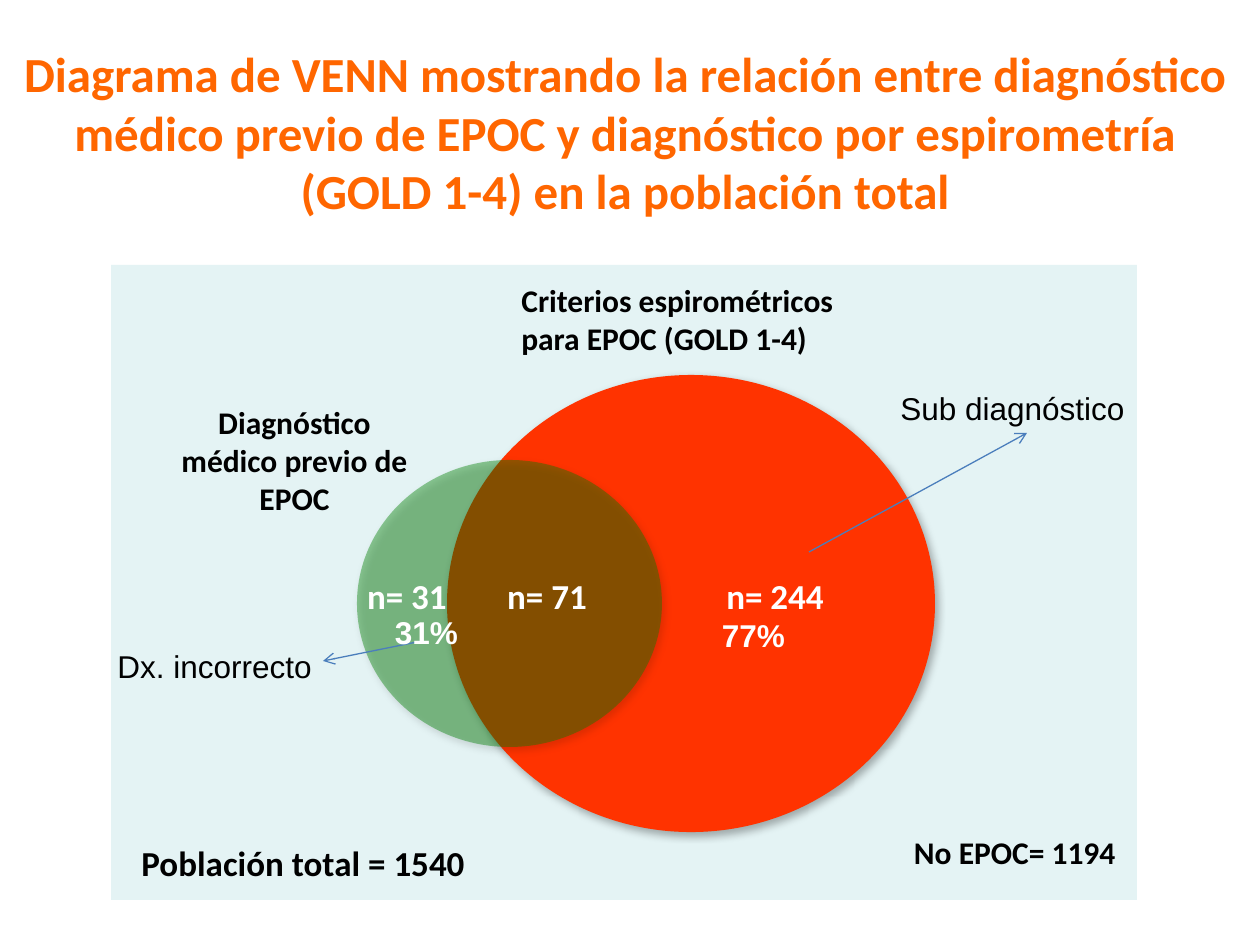
import pptx
import pptx.util
import pptx.dml.color
import pptx.enum.shapes
import pptx.enum.text
import pptx.oxml
import pptx.oxml.ns

RGBColor = pptx.dml.color.RGBColor
MSO_SHAPE = pptx.enum.shapes.MSO_SHAPE
ALIGN = pptx.enum.text.PP_ALIGN
SCALE = 914400 / 126

ORANGE = RGBColor(0xFF, 0x66, 0x00)
PALE = RGBColor(0xE4, 0xF3, 0xF4)
RED = RGBColor(0xFF, 0x33, 0x00)
GREEN = RGBColor(0x00, 0x80, 0x00)
BLUE = RGBColor(0x4B, 0x7E, 0xBC)
BLACK = RGBColor(0x00, 0x00, 0x00)
WHITE = RGBColor(0xFF, 0xFF, 0xFF)

TITLE = (
    "Diagrama de VENN mostrando la relación entre diagnóstico médico previo "
    "de EPOC y diagnóstico por espirometría (GOLD 1-4) en la población total",
    (0, 37, 1250, 190), 28, "Calibri", ORANGE, True, ALIGN.CENTER)
PANEL = (111, 265, 1026, 635)
CIRCLES = [
    ((447, 375, 488, 457), RED, 100),
    ((357, 460, 305, 287), GREEN, 41),
]
SET_LABELS = [
    ("Población total = 1540", (129, 835, 360, 55), 20, "Calibri", BLACK, True, ALIGN.LEFT),
    ("Criterios espirométricos para EPOC (GOLD 1-4)", (509, 275, 355, 89), 18, "Calibri", BLACK, True, ALIGN.LEFT),
    ("Diagnóstico médico previo de EPOC", (156, 397, 277, 127), 18, "Calibri", BLACK, True, ALIGN.CENTER),
    ("No EPOC= 1194", (774, 827, 354, 50), 18, "Calibri", BLACK, True, ALIGN.RIGHT),
    ("n= 244", (685, 568, 180, 55), 20, "Calibri", WHITE, True, ALIGN.CENTER),
    ("n= 71", (457, 568, 180, 55), 20, "Calibri", WHITE, True, ALIGN.CENTER),
    ("n= 31", (339, 568, 136, 55), 20, "Calibri", WHITE, True, ALIGN.CENTER),
]
ARROWS = [(422, 641, 323, 661), (809, 552, 1027, 433)]
CALLOUTS = [
    ("Dx. incorrecto", (105, 641, 248, 89), 18, "Arial", BLACK, False, ALIGN.LEFT),
    ("Sub diagnóstico", (888, 383, 287, 89), 18, "Arial", BLACK, False, ALIGN.LEFT),
    ("77%", (709, 610, 89, 50), 18, "Arial", WHITE, True, ALIGN.CENTER),
    ("31%", (382, 607, 89, 50), 18, "Arial", WHITE, True, ALIGN.CENTER),
]
SHADOW = (
    '<a:effectLst %s><a:outerShdw blurRad="57150" dist="33020" dir="3180000" '
    'algn="ctr" rotWithShape="0"><a:srgbClr val="000000"><a:alpha val="30000"/>'
    '</a:srgbClr></a:outerShdw></a:effectLst>' % pptx.oxml.ns.nsdecls("a"))


def px(values):
    return [pptx.util.Emu(round(v * SCALE)) for v in values]


def add_text(shapes, text, box, size, font, color, bold, align):
    tf = shapes.add_textbox(*px(box)).text_frame
    tf.word_wrap = True
    p = tf.paragraphs[0]
    p.text = text
    p.alignment = align
    p.font.size = pptx.util.Pt(size)
    p.font.name = font
    p.font.bold = bold
    p.font.color.rgb = color


def add_filled(shapes, kind, box, color):
    sp = shapes.add_shape(kind, *px(box))
    sp.shadow.inherit = False
    sp.fill.solid()
    sp.fill.fore_color.rgb = color
    sp.line.fill.background()
    return sp


def add_circle(shapes, box, color, opacity):
    sp = add_filled(shapes, MSO_SHAPE.OVAL, box, color)
    props = sp._element.spPr
    props.replace(props.find(pptx.oxml.ns.qn("a:effectLst")), pptx.oxml.parse_xml(SHADOW))
    if opacity < 100:
        clr = props.find(".//" + pptx.oxml.ns.qn("a:srgbClr"))
        clr.makeelement
        alpha = pptx.oxml.parse_xml(
            '<a:alpha %s val="%d"/>' % (pptx.oxml.ns.nsdecls("a"), opacity * 1000))
        clr.append(alpha)


def add_arrow(shapes, ends):
    c = shapes.add_connector(pptx.enum.shapes.MSO_CONNECTOR.STRAIGHT, *px(ends))
    c.line.color.rgb = BLUE
    c.line.width = pptx.util.Pt(0.75)
    ns = pptx.oxml.ns.nsdecls("a")
    c.line._get_or_add_ln().append(pptx.oxml.parse_xml('<a:tailEnd %s type="arrow"/>' % ns))
    c._element.spPr.append(pptx.oxml.parse_xml('<a:effectLst %s/>' % ns))


def main():
    prs = pptx.Presentation()
    prs.slide_width, prs.slide_height = px((1260, 945))
    s = prs.slides.add_slide(prs.slide_layouts[6])
    add_text(s.shapes, *TITLE)
    venn = s.shapes.add_group_shape().shapes
    add_filled(venn, MSO_SHAPE.RECTANGLE, PANEL, PALE)
    for circle in CIRCLES:
        add_circle(venn, *circle)
    for label in SET_LABELS:
        add_text(venn, *label)
    for ends in ARROWS:
        add_arrow(s.shapes, ends)
    for label in CALLOUTS:
        add_text(s.shapes, *label)
    prs.save("out.pptx")


if __name__ == "__main__":
    main()
